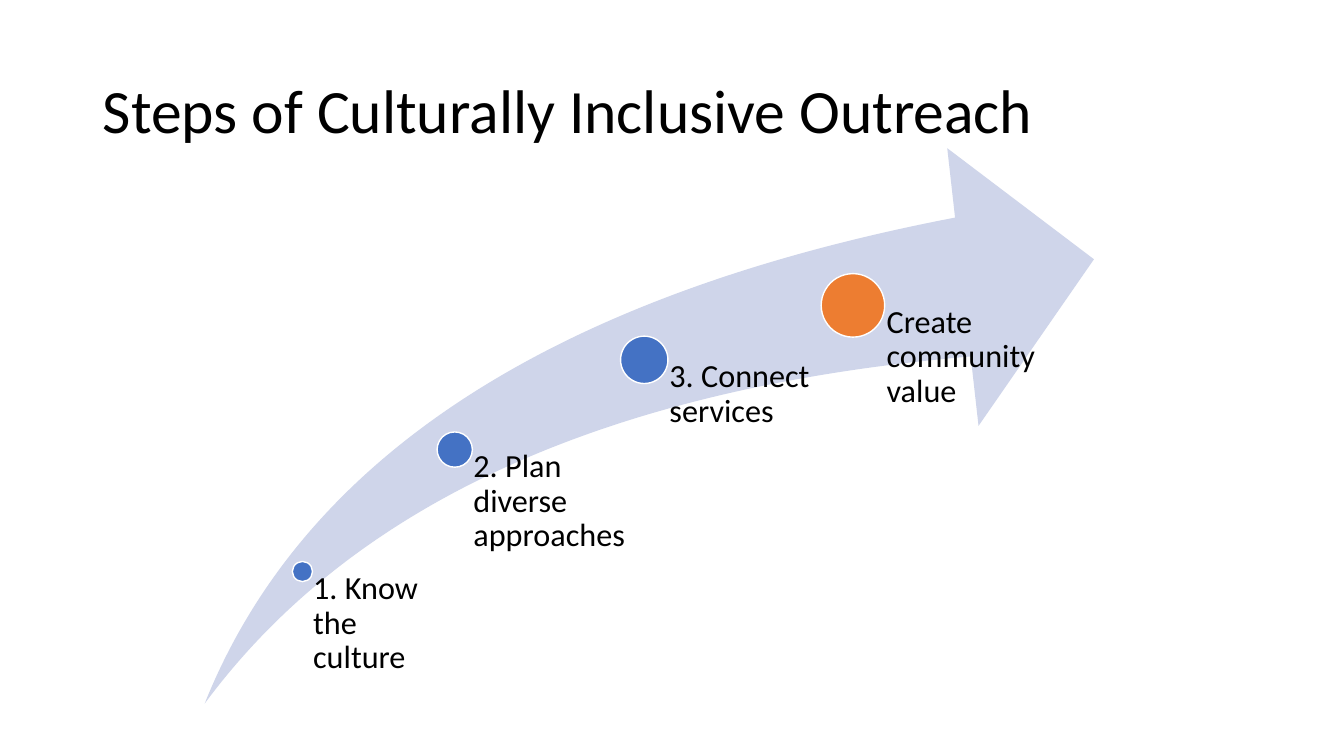
from pptx import Presentation
from pptx.dml.color import RGBColor
from pptx.enum.shapes import MSO_SHAPE
from pptx.enum.text import MSO_ANCHOR, MSO_AUTO_SIZE, PP_ALIGN
from pptx.util import Inches, Pt

BLACK = RGBColor(0x00, 0x00, 0x00)
WHITE = RGBColor(0xFF, 0xFF, 0xFF)
PALE_BLUE = RGBColor(0xCF, 0xD5, 0xEA)
BLUE = RGBColor(0x44, 0x72, 0xC4)
ORANGE = RGBColor(0xED, 0x7D, 0x31)

TITLE = "Steps of Culturally Inclusive Outreach"
# label, dot centre x, dot centre y, dot diameter, label width, dot colour
STEPS = [
    ("1. Know the culture", 3.0, 5.67, 0.2, 1.51, BLUE),
    ("2. Plan diverse approaches", 4.51, 4.46, 0.35, 1.85, BLUE),
    ("3. Connect services", 6.39, 3.57, 0.47, 1.85, BLUE),
    ("Create community value", 8.46, 3.03, 0.63, 1.85, ORANGE),
]
ARROW = (2.03, 1.47, 8.82, 5.51)
ARROW_BOTTOM = ARROW[1] + ARROW[3]
INSET_PER_DIAMETER = 0.53


def write(frame, text, size):
    frame.word_wrap = True
    frame.auto_size = MSO_AUTO_SIZE.NONE
    para = frame.paragraphs[0]
    para.alignment = PP_ALIGN.LEFT
    para.line_spacing = 0.9
    span = para.add_run()
    span.text = text
    span.font.size = Pt(size)
    span.font.name = "Calibri"
    span.font.color.rgb = BLACK


def add_filled(shapes, kind, bounds, colour):
    shape = shapes.add_shape(kind, *map(Inches, bounds))
    shape.shadow.inherit = False
    shape.fill.solid()
    shape.fill.fore_color.rgb = colour
    shape.line.fill.background()
    return shape


def add_step(shapes, text, x, y, diameter, width, colour):
    """Draw a dot and hang its label from the dot's centre."""
    bounds = (x - diameter / 2, y - diameter / 2, diameter, diameter)
    dot = add_filled(shapes, MSO_SHAPE.OVAL, bounds, colour)
    dot.line.color.rgb = WHITE
    dot.line.width = Pt(1)

    label = shapes.add_textbox(Inches(x), Inches(y), Inches(width), Inches(ARROW_BOTTOM - y))
    frame = label.text_frame
    frame.margin_left = Inches(diameter * INSET_PER_DIAMETER)
    frame.margin_top = frame.margin_right = frame.margin_bottom = 0
    write(frame, text, 23)


def main():
    deck = Presentation()
    deck.slide_width, deck.slide_height = Inches(13.33), Inches(7.5)
    page = deck.slides.add_slide(deck.slide_layouts[5])

    title = page.shapes.title
    title.left, title.top = Inches(0.92), Inches(0.4)
    title.width, title.height = Inches(11.5), Inches(1.45)
    title.text_frame.vertical_anchor = MSO_ANCHOR.MIDDLE
    write(title.text_frame, TITLE, 44)

    diagram = page.shapes.add_group_shape().shapes
    arrow = add_filled(diagram, MSO_SHAPE.SWOOSH_ARROW, ARROW, PALE_BLUE)
    arrow.adjustments[0] = arrow.adjustments[1] = 0.25
    for step in STEPS:
        add_step(diagram, *step)

    deck.save("out.pptx")


if __name__ == "__main__":
    main()
